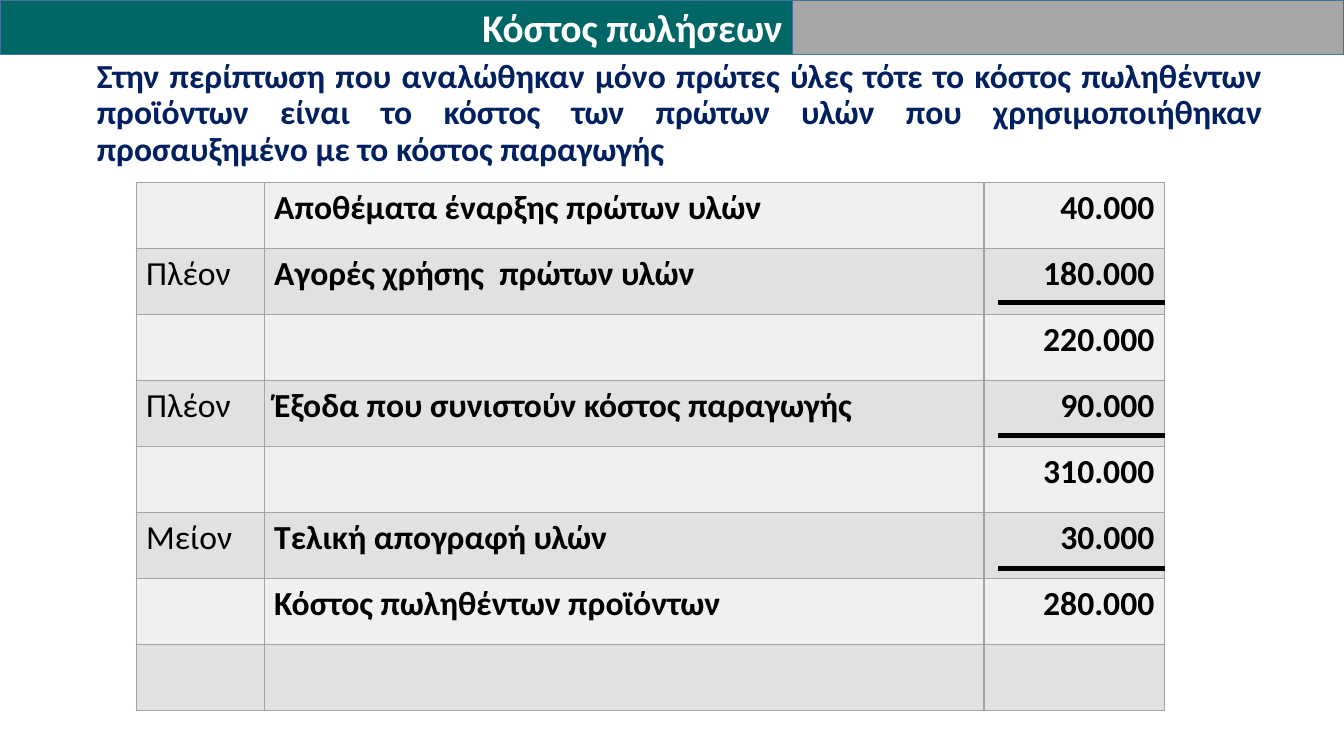
from lxml import etree
from pptx import Presentation
from pptx import util as u
from pptx.dml.color import RGBColor
from pptx.enum import shapes, text
from pptx.oxml import ns

FONT = "Calibri"
ROWS = [
    ("", "Αποθέματα έναρξης πρώτων υλών", "40.000"),
    ("Πλέον", "Αγορές χρήσης  πρώτων υλών", "180.000"),
    ("", "", "220.000"),
    ("Πλέον", "Έξοδα που συνιστούν κόστος παραγωγής", "90.000"),
    ("", "", "310.000"),
    ("Μείον", "Τελική απογραφή υλών", "30.000"),
    ("", "Κόστος πωληθέντων προϊόντων", "280.000"),
    ("", "", ""),
]
COLUMN_WIDTHS = (1.27, 7.14, 1.79)
ROW_HEIGHT = 0.655
ROW_FILLS = ("F0F0F0", "E1E1E1")


def color(value):
    return RGBColor.from_string(value)


def apply(target, values):
    for name, value in values.items():
        setattr(target, name, value)


def paint(shape, fill):
    shape.fill.solid()
    shape.fill.fore_color.rgb = color(fill)


def outline(line, line_color, width):
    line.color.rgb = color(line_color)
    line.width = u.Pt(width)


def place(shape, left, top, width, height):
    apply(shape, {"left": u.Inches(left), "top": u.Inches(top),
                  "width": u.Inches(width), "height": u.Inches(height)})


def write(frame, words, size, font_color, bold, alignment):
    paragraph = frame.paragraphs[0]
    paragraph.alignment = alignment
    run = paragraph.add_run()
    run.text = words
    apply(run.font, {"name": FONT, "size": u.Pt(size), "bold": bold})
    run.font.color.rgb = color(font_color)
    return paragraph


def add_header(slide):
    title = slide.shapes.title
    place(title, 0, 0, 7.86, 0.54)
    apply(title.text_frame, {"auto_size": text.MSO_AUTO_SIZE.NONE, "word_wrap": True,
                             "vertical_anchor": text.MSO_ANCHOR.MIDDLE})
    write(title.text_frame, "Κόστος πωλήσεων", 28, "FFFFFF", True, text.PP_ALIGN.RIGHT)
    band = slide.shapes.add_shape(shapes.MSO_SHAPE.RECTANGLE, 0, 0, 0, 0)
    place(band, 7.86, 0, 5.47, 0.54)
    band.shadow.inherit = False
    for bar, fill in ((title, "006666"), (band, "A6A6A6")):
        paint(bar, fill)
        outline(bar.line, "43739E", 1)


def add_body(slide, words):
    body = slide.placeholders[1]
    place(body, 0.86, 0.54, 11.76, 6.96)
    apply(body.text_frame, {"auto_size": text.MSO_AUTO_SIZE.NONE, "word_wrap": True})
    paragraph = write(body.text_frame, words, 24, "002060", True, text.PP_ALIGN.JUSTIFY)
    apply(paragraph, {"line_spacing": 0.9, "space_before": u.Pt(10)})
    properties = paragraph._p.get_or_add_pPr()
    properties.set("marL", "0")
    properties.set("indent", "0")
    etree.SubElement(properties, ns.qn("a:buNone"))


def set_borders(cell, border_color, width):
    properties = cell._tc.get_or_add_tcPr()
    for position, side in enumerate(("lnL", "lnR", "lnT", "lnB")):
        border = etree.Element(ns.qn("a:" + side), w=str(u.Pt(width)))
        fill = etree.SubElement(border, ns.qn("a:solidFill"))
        etree.SubElement(fill, ns.qn("a:srgbClr"), val=border_color)
        properties.insert(position, border)


def add_cost_table(slide):
    frame = slide.shapes.add_table(len(ROWS), len(COLUMN_WIDTHS), u.Inches(1.35), u.Inches(1.81),
                                   u.Inches(sum(COLUMN_WIDTHS)), u.Inches(ROW_HEIGHT * len(ROWS)))
    table = frame.table
    apply(table, {"first_row": False, "horz_banding": False})
    for column, width in zip(table.columns, COLUMN_WIDTHS):
        column.width = u.Inches(width)
    for row_index, values in enumerate(ROWS):
        table.rows[row_index].height = u.Inches(ROW_HEIGHT)
        for column_index, value in enumerate(values):
            cell = table.cell(row_index, column_index)
            paint(cell, ROW_FILLS[row_index % 2])
            set_borders(cell, "A5A5A5", 1)
            if value:
                alignment = text.PP_ALIGN.RIGHT if column_index == 2 else text.PP_ALIGN.LEFT
                write(cell.text_frame, value, 24, "000000", column_index > 0, alignment)


def add_sum_line(slide, top):
    line = slide.shapes.add_connector(shapes.MSO_CONNECTOR.STRAIGHT, u.Inches(9.9), u.Inches(top),
                                      u.Inches(11.55), u.Inches(top))
    outline(line.line, "000000", 3)
    etree.SubElement(line._element.spPr, ns.qn("a:effectLst"))


def main():
    presentation = Presentation()
    apply(presentation, {"slide_width": u.Inches(13.33), "slide_height": u.Inches(7.5)})
    slide = presentation.slides.add_slide(presentation.slide_layouts[1])
    add_body(slide, "Στην περίπτωση που αναλώθηκαν μόνο πρώτες ύλες τότε το κόστος πωληθέντων "
                    "προϊόντων είναι το κόστος των πρώτων υλών που χρησιμοποιήθηκαν "
                    "προσαυξημένο με το κόστος παραγωγής")
    add_header(slide)
    add_cost_table(slide)
    for index in range(3):
        add_sum_line(slide, 3 + 1.32 * index)
    presentation.save("out.pptx")


if __name__ == "__main__":
    main()
